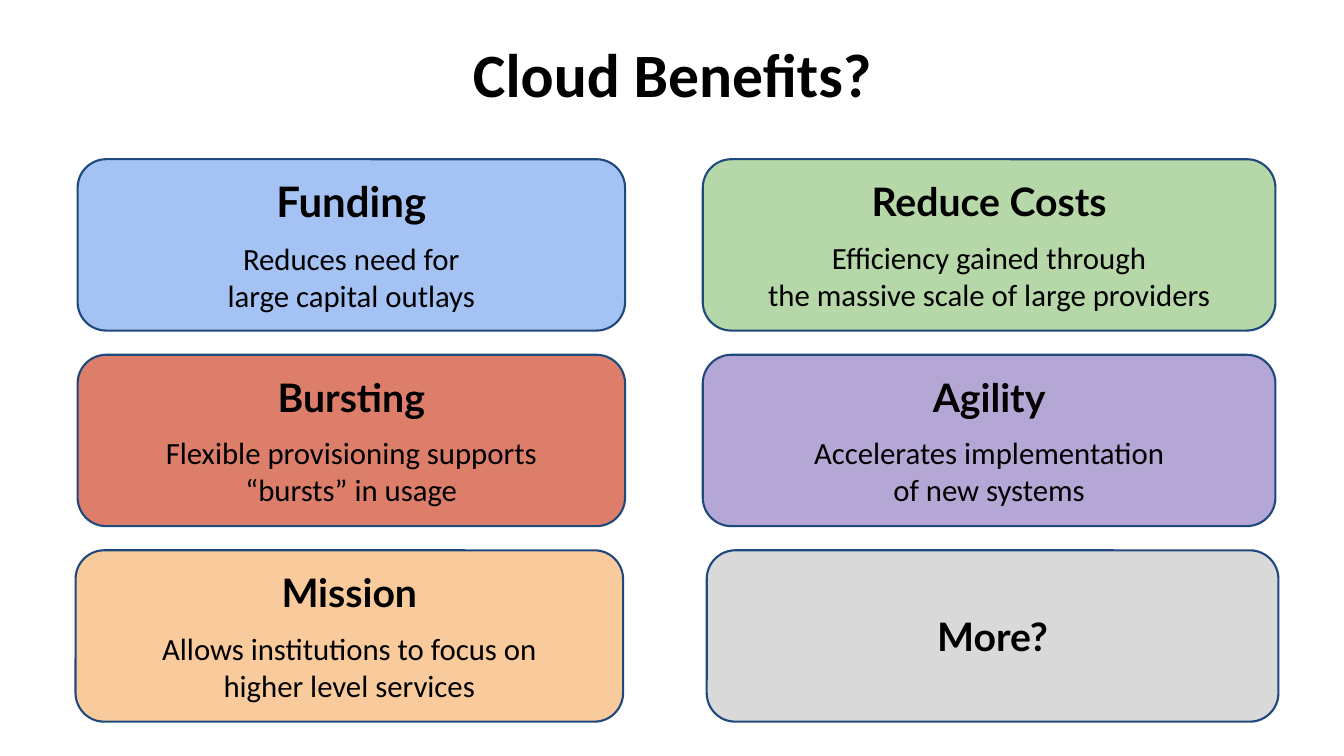
from pptx import Presentation
from pptx.dml.color import RGBColor
from pptx.enum import shapes, text
from pptx.util import Inches, Pt

BLACK = RGBColor(0x00, 0x00, 0x00)
NAVY = RGBColor(0x1F, 0x49, 0x7D)
BLUE = RGBColor(0xA4, 0xC2, 0xF4)
GREEN = RGBColor(0xB6, 0xD7, 0xA8)
RED = RGBColor(0xDD, 0x7E, 0x6B)
PURPLE = RGBColor(0xB4, 0xA7, 0xD6)
ORANGE = RGBColor(0xF9, 0xCB, 0x9C)
GREY = RGBColor(0xD9, 0xD9, 0xD9)

TITLE_FORMAT = {"name": "Calibri", "size": Pt(44), "bold": True}
HEADING_FORMAT = {"name": "Lato", "bold": True}
DETAIL_FORMAT = {"name": "Calibri", "size": Pt(22), "bold": False}

FIRST_TOP, ROW_STEP, CARD_HEIGHT = 1.58, 1.94, 1.7

# row, left, width, fill, heading, heading size, detail (\v is a line break)
CARDS = [
    (0, 0.77, 5.43, BLUE, "Funding", 30,
     "Reduces need for\vlarge capital outlays"),
    (0, 6.97, 5.68, GREEN, "Reduce Costs", 28,
     "Efficiency gained through\vthe massive scale of large providers"),
    (1, 0.77, 5.43, RED, "Bursting", 28,
     "Flexible provisioning supports\v“bursts” in usage"),
    (1, 6.97, 5.68, PURPLE, "Agility", 28,
     "Accelerates implementation\vof new systems"),
    (2, 0.75, 5.43, ORANGE, "Mission", 28,
     "Allows institutions to focus on\vhigher level services"),
    (2, 7.01, 5.67, GREY, "More?", 28, None),
]


def write_paragraph(paragraph, words, font_format):
    """Fill a paragraph with centred black text in the given format."""
    paragraph.text = words
    paragraph.alignment = text.PP_ALIGN.CENTER
    paragraph.font.color.rgb = BLACK
    for name, value in font_format.items():
        setattr(paragraph.font, name, value)


def add_title(slide, words):
    title = slide.shapes.title
    title.left, title.top = Inches(0.67), Inches(0.3)
    title.width, title.height = Inches(12), Inches(0.85)
    title.text_frame.vertical_anchor = text.MSO_ANCHOR.MIDDLE
    write_paragraph(title.text_frame.paragraphs[0], words, TITLE_FORMAT)


def add_card(slide, row, left, width, fill, heading, heading_size, detail):
    card = slide.shapes.add_shape(
        shapes.MSO_SHAPE.FLOWCHART_ALTERNATE_PROCESS,
        Inches(left), Inches(FIRST_TOP + row * ROW_STEP),
        Inches(width), Inches(CARD_HEIGHT))
    card.shadow.inherit = False
    card.fill.solid()
    card.fill.fore_color.rgb = fill
    card.line.color.rgb = NAVY
    card.line.width = Pt(1.5)

    frame = card.text_frame
    frame.word_wrap = True
    frame.vertical_anchor = text.MSO_ANCHOR.MIDDLE
    for side in ("left", "top", "right", "bottom"):
        setattr(frame, f"margin_{side}", Inches(0.1))

    paragraph = frame.paragraphs[0]
    paragraph.space_after = Pt(10)
    write_paragraph(paragraph, heading,
                    {**HEADING_FORMAT, "size": Pt(heading_size)})
    if detail:
        write_paragraph(frame.add_paragraph(), detail, DETAIL_FORMAT)


def main():
    presentation = Presentation()
    presentation.slide_width = Inches(13.33)
    presentation.slide_height = Inches(7.5)
    slide = presentation.slides.add_slide(presentation.slide_layouts[5])
    add_title(slide, "Cloud Benefits?")
    for card in CARDS:
        add_card(slide, *card)
    presentation.save("out.pptx")


if __name__ == "__main__":
    main()
